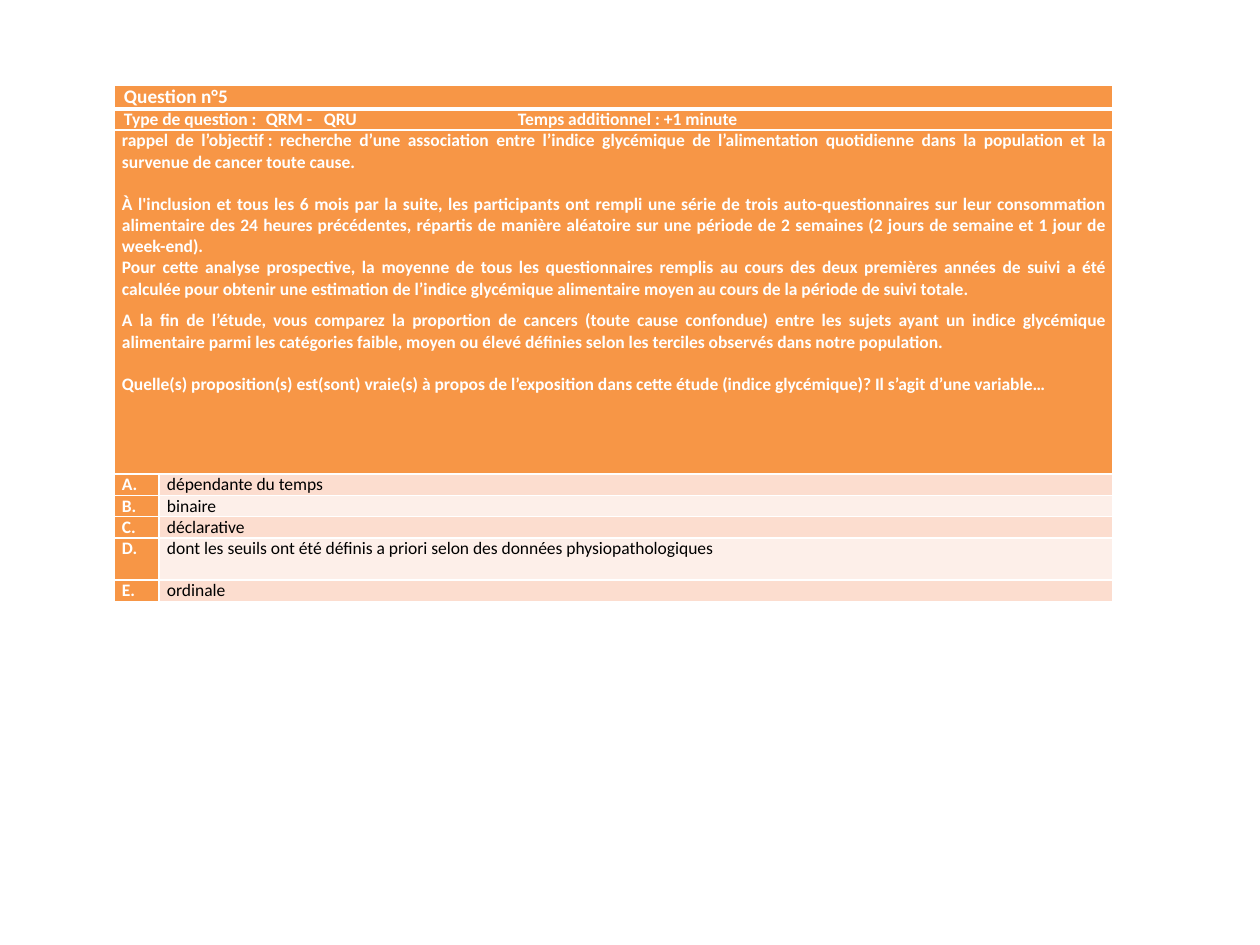
from lxml.etree import SubElement
from pptx import Presentation
from pptx.dml.color import RGBColor
from pptx.enum.text import MSO_ANCHOR, PP_ALIGN
from pptx.oxml import parse_xml
from pptx.oxml.ns import nsdecls, qn
from pptx.util import Emu, Pt

COLORS = {"orange": "F79646", "peach": "FCDDCF", "cream": "FDEFE9", "white": "FFFFFF", "black": "000000"}
SIDES = ("L", "R", "T", "B")
TYPE_TABS = (142, 200, 394)
COLUMNS = (45, 954)
ROWS = (24, 21, 344, 21, 21, 21, 42, 21)

CONTEXT = [
    ("rappel de l’objectif\u00a0: recherche d’une association entre l’indice glycémique de l’alimentation "
     "quotidienne dans la population et la survenue de cancer toute cause.", {}),
    ("À l'inclusion et tous les 6 mois par la suite, les participants ont rempli une série de trois "
     "auto-questionnaires sur leur consommation alimentaire des 24 heures précédentes, répartis de manière "
     "aléatoire sur une période de 2 semaines (2 jours de semaine et 1 jour de week-end).",
     {"space_before": Pt(12)}),
    ("Pour cette analyse prospective, la moyenne de tous les questionnaires remplis au cours des deux "
     "premières années de suivi a été calculée pour obtenir une estimation de l’indice glycémique alimentaire "
     "moyen au cours de la période de suivi totale.", {}),
    ("A la fin de l’étude, vous comparez la proportion de cancers (toute cause confondue) entre les sujets "
     "ayant un indice glycémique alimentaire parmi les catégories faible, moyen ou élevé définies selon les "
     "terciles observés dans notre population.", {"space_before": Pt(6), "space_after": Pt(6)}),
    ("Quelle(s) proposition(s) est(sont) vraie(s) à propos de l’exposition dans cette étude (indice "
     "glycémique)? Il s’agit d’une variable…", {"space_before": Pt(6)}),
]
ANSWERS = (
    "dépendante du temps",
    "binaire",
    "déclarative",
    "dont les seuils ont été définis a priori selon des données physiopathologiques",
    "ordinale",
)


def px(length):
    """Turn px into EMU."""
    return Emu(round(length * 914400 / 126))


def apply(target, values):
    """Set each attribute of target from a dict."""
    for name, value in values.items():
        setattr(target, name, value)


class QuestionPage:
    """Style and current slide of a question sheet."""

    def __init__(self, deck):
        """Add a blank page to the deck."""
        self.font = "Calibri"
        self.page = deck.slides.add_slide(deck.slide_layouts[6])

    def table(self, left, top, columns, rows):
        """Add a plain table with the given column and row sizes."""
        frame = self.page.shapes.add_table(
            len(rows), len(columns), px(left), px(top), px(sum(columns)), px(sum(rows)))
        grid = frame.table
        apply(grid, {"first_row": False, "horz_banding": False})
        for column, width in zip(grid.columns, columns):
            column.width = px(width)
        for row, height in zip(grid.rows, rows):
            row.height = px(height)
        return grid

    def cell(self, cell, fill, top=1, bottom=1):
        """Fill a cell, set its margins and draw its white borders."""
        apply(cell, {"margin_left": px(8), "margin_right": px(8), "margin_top": 0,
                     "margin_bottom": 0, "vertical_anchor": MSO_ANCHOR.TOP})
        cell.fill.solid()
        cell.fill.fore_color.rgb = RGBColor.from_string(COLORS[fill])
        widths = {"T": top, "B": bottom}
        for index, side in enumerate(SIDES):
            border = parse_xml(
                f'<a:ln{side} {nsdecls("a")} w="{Pt(widths.get(side, 1))}"><a:solidFill>'
                f'<a:srgbClr val="{COLORS["white"]}"/></a:solidFill></a:ln{side}>')
            cell._tc.get_or_add_tcPr().insert(index, border)

    def text(self, cell, paragraphs, color="white", size=10, bold=True, align=PP_ALIGN.LEFT, indent=0, tabs=()):
        """Write paragraphs, each with its own spacing, into a cell."""
        frame = cell.text_frame
        for index, (words, spacing) in enumerate(paragraphs):
            para = frame.add_paragraph() if index else frame.paragraphs[0]
            properties = para._p.get_or_add_pPr()
            properties.set("marL", str(px(indent)))
            if tabs:
                stops = SubElement(properties, qn("a:tabLst"))
                for stop in tabs:
                    SubElement(stops, qn("a:tab"), pos=str(px(stop)), algn="l")
            apply(para, {"alignment": align, **spacing})
            span = para.add_run()
            span.text = words
            apply(span.font, {"name": self.font, "size": Pt(size), "bold": bold})
            span.font.color.rgb = RGBColor.from_string(COLORS[color])


def main():
    """Build the question slide."""
    deck = Presentation()
    apply(deck, {"slide_width": px(1260), "slide_height": px(945)})
    sheet = QuestionPage(deck)
    grid = sheet.table(114, 85, COLUMNS, ROWS)

    headings = (
        ([("Question n°5", {})], {"size": 11, "align": PP_ALIGN.JUSTIFY, "indent": 2}, {"bottom": 3}),
        ([("Type de question\u00a0:\tQRM -\tQRU\tTemps additionnel\u00a0: +1 minute", {})],
         {"indent": 2, "tabs": TYPE_TABS}, {"top": 3}),
        (CONTEXT, {"align": PP_ALIGN.JUSTIFY}, {}),
    )
    for row, (paragraphs, style, borders) in enumerate(headings):
        grid.cell(row, 0).merge(grid.cell(row, 1))
        for column in range(len(COLUMNS)):
            sheet.cell(grid.cell(row, column), "orange", **borders)
        sheet.text(grid.cell(row, 0), paragraphs, **style)

    for index, (letter, answer) in enumerate(zip("ABCDE", ANSWERS)):
        label, choice = grid.rows[index + len(headings)].cells
        sheet.cell(label, "orange")
        sheet.text(label, [(f"{letter}.", {})])
        sheet.cell(choice, "cream" if index % 2 else "peach")
        sheet.text(choice, [(answer, {})], color="black", bold=False)

    deck.save("out.pptx")


if __name__ == "__main__":
    main()
